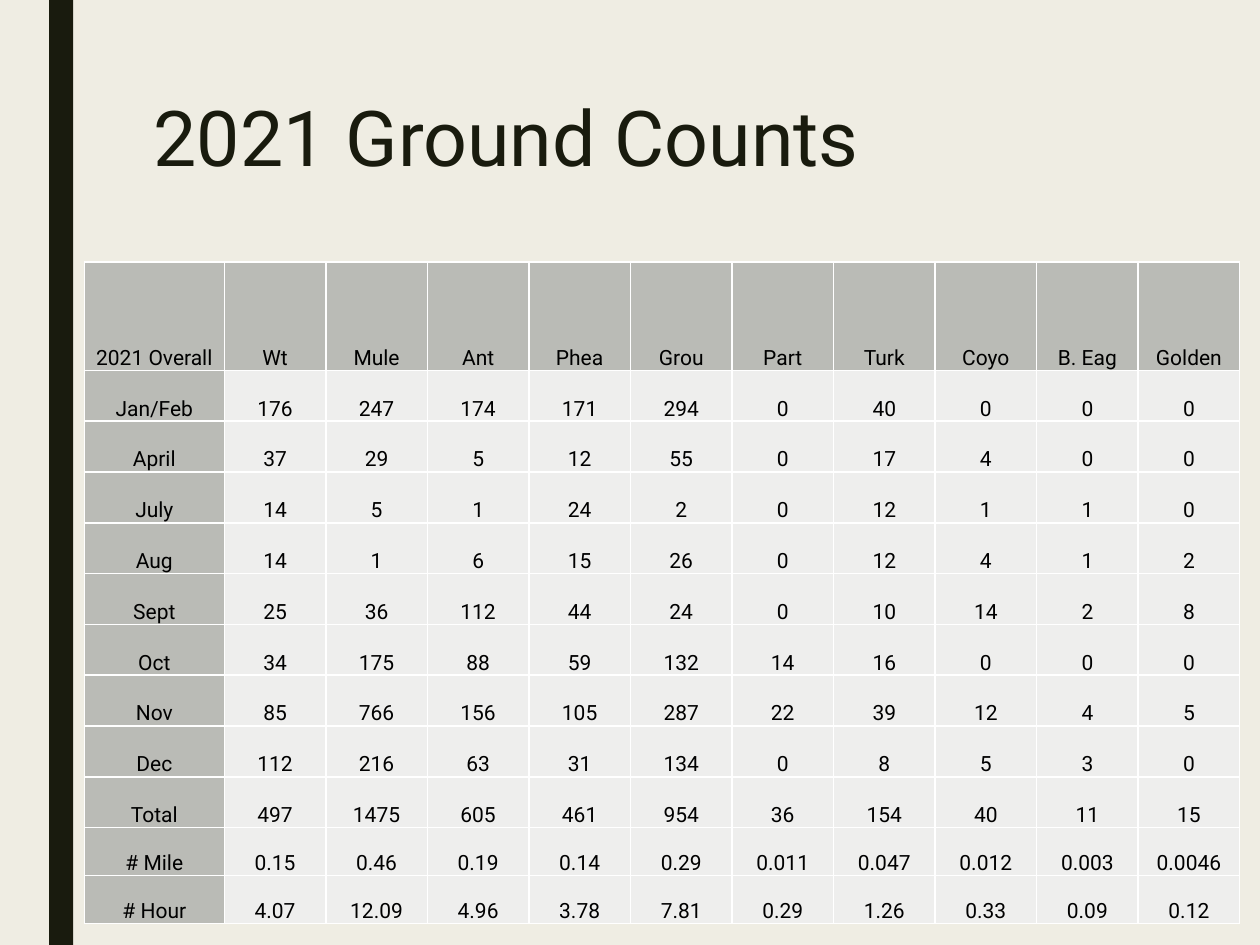
import dataclasses

import lxml.etree
import pptx
import pptx.dml.color
import pptx.enum.shapes
import pptx.enum.text
import pptx.oxml.ns
import pptx.util

SLIDE_W, SLIDE_H = 10, 7.5
FONT = "Roboto"
PAPER, INK, HEAD, BODY = "EFEDE3", "191B0E", "BABBB6", "EEEEED"
BLACK, WHITE = "000000", "FFFFFF"

SPECIES = ["Wt", "Mule", "Ant", "Phea", "Grou", "Part", "Turk", "Coyo", "B. Eag", "Golden"]
COUNTS = {
    "Jan/Feb": "176 247 174 171 294 0 40 0 0 0",
    "April": "37 29 5 12 55 0 17 4 0 0",
    "July": "14 5 1 24 2 0 12 1 1 0",
    "Aug": "14 1 6 15 26 0 12 4 1 2",
    "Sept": "25 36 112 44 24 0 10 14 2 8",
    "Oct": "34 175 88 59 132 14 16 0 0 0",
    "Nov": "85 766 156 105 287 22 39 12 4 5",
    "Dec": "112 216 63 31 134 0 8 5 3 0",
    "Total": "497 1475 605 461 954 36 154 40 11 15",
}
RATES = {
    "# Mile": "0.15 0.46 0.19 0.14 0.29 0.011 0.047 0.012 0.003 0.0046",
    "# Hour": "4.07 12.09 4.96 3.78 7.81 0.29 1.26 0.33 0.09 0.12",
}


@dataclasses.dataclass
class Box:
    left: float
    top: float
    width: float
    height: float

    def emu(self) -> list:
        return [pptx.util.Inches(v) for v in (self.left, self.top, self.width, self.height)]


BAR = Box(0.39, 0, 0.19, SLIDE_H)
TITLE = Box(1.12, 0.75, 7.88, 1.62)
TABLE = Box(0.67, 2.08, 9.17, 5.25)
LABEL_W, HEADER_H, RATE_H = 1.11, 0.86, 0.38


def rgb(value: str) -> pptx.dml.color.RGBColor:
    return pptx.dml.color.RGBColor.from_string(value)


def paint(fill, value: str) -> None:
    fill.solid()
    fill.fore_color.rgb = rgb(value)


def write(tf, text: str, size: float, color: str, align=None, spacing=None) -> None:
    p = tf.paragraphs[0]
    p.alignment = align
    p.line_spacing = spacing
    r = p.add_run()
    r.text = text
    r.font.name, r.font.size, r.font.bold = FONT, pptx.util.Pt(size), False
    r.font.color.rgb = rgb(color)


def add_borders(cell, color: str, width: float) -> None:
    qn = pptx.oxml.ns.qn
    tc_pr = cell._tc.get_or_add_tcPr()
    for side in ("a:lnL", "a:lnR", "a:lnT", "a:lnB"):
        ln = lxml.etree.SubElement(tc_pr, qn(side), w=str(pptx.util.Pt(width)))
        solid = lxml.etree.SubElement(ln, qn("a:solidFill"))
        lxml.etree.SubElement(solid, qn("a:srgbClr"), val=color)


def style_cell(cell, text: str, fill: str) -> None:
    cell.margin_left = cell.margin_right = cell.margin_top = pptx.util.Inches(0.01)
    cell.margin_bottom = 0
    cell.vertical_anchor = pptx.enum.text.MSO_ANCHOR.BOTTOM
    add_borders(cell, WHITE, 1)
    paint(cell.fill, fill)
    write(cell.text_frame, text, 12, BLACK, align=pptx.enum.text.PP_ALIGN.CENTER)


def add_counts_table(s, box: Box) -> None:
    rows = [["2021 Overall", *SPECIES]]
    rows += [[label, *values.split()] for label, values in (COUNTS | RATES).items()]
    table = s.shapes.add_table(len(rows), len(rows[0]), *box.emu()).table
    table.first_row = table.horz_banding = False

    # Equal species columns and month rows share the space left over
    species_w = (box.width - LABEL_W) / len(SPECIES)
    month_h = (box.height - HEADER_H - RATE_H * len(RATES)) / len(COUNTS)
    widths = [LABEL_W] + [species_w] * len(SPECIES)
    heights = [HEADER_H] + [month_h] * len(COUNTS) + [RATE_H] * len(RATES)
    for column, width in zip(table.columns, widths):
        column.width = pptx.util.Inches(width)
    for row, height in zip(table.rows, heights):
        row.height = pptx.util.Inches(height)

    for i, values in enumerate(rows):
        for j, value in enumerate(values):
            style_cell(table.cell(i, j), value, HEAD if i == 0 or j == 0 else BODY)


def main() -> None:
    prs = pptx.Presentation()
    prs.slide_width = pptx.util.Inches(SLIDE_W)
    prs.slide_height = pptx.util.Inches(SLIDE_H)
    s = prs.slides.add_slide(prs.slide_layouts[6])
    paint(s.background.fill, PAPER)

    # Vertical bar at the left
    sp = s.shapes.add_shape(pptx.enum.shapes.MSO_SHAPE.RECTANGLE, *BAR.emu())
    sp.shadow.inherit = False
    paint(sp.fill, INK)
    sp.line.fill.background()

    # Title
    tf = s.shapes.add_textbox(*TITLE.emu()).text_frame
    tf.word_wrap = True
    write(tf, "2021 Ground Counts", 44, INK, spacing=0.89)

    # Counts by month and species
    add_counts_table(s, TABLE)
    prs.save("out.pptx")


if __name__ == "__main__":
    main()
